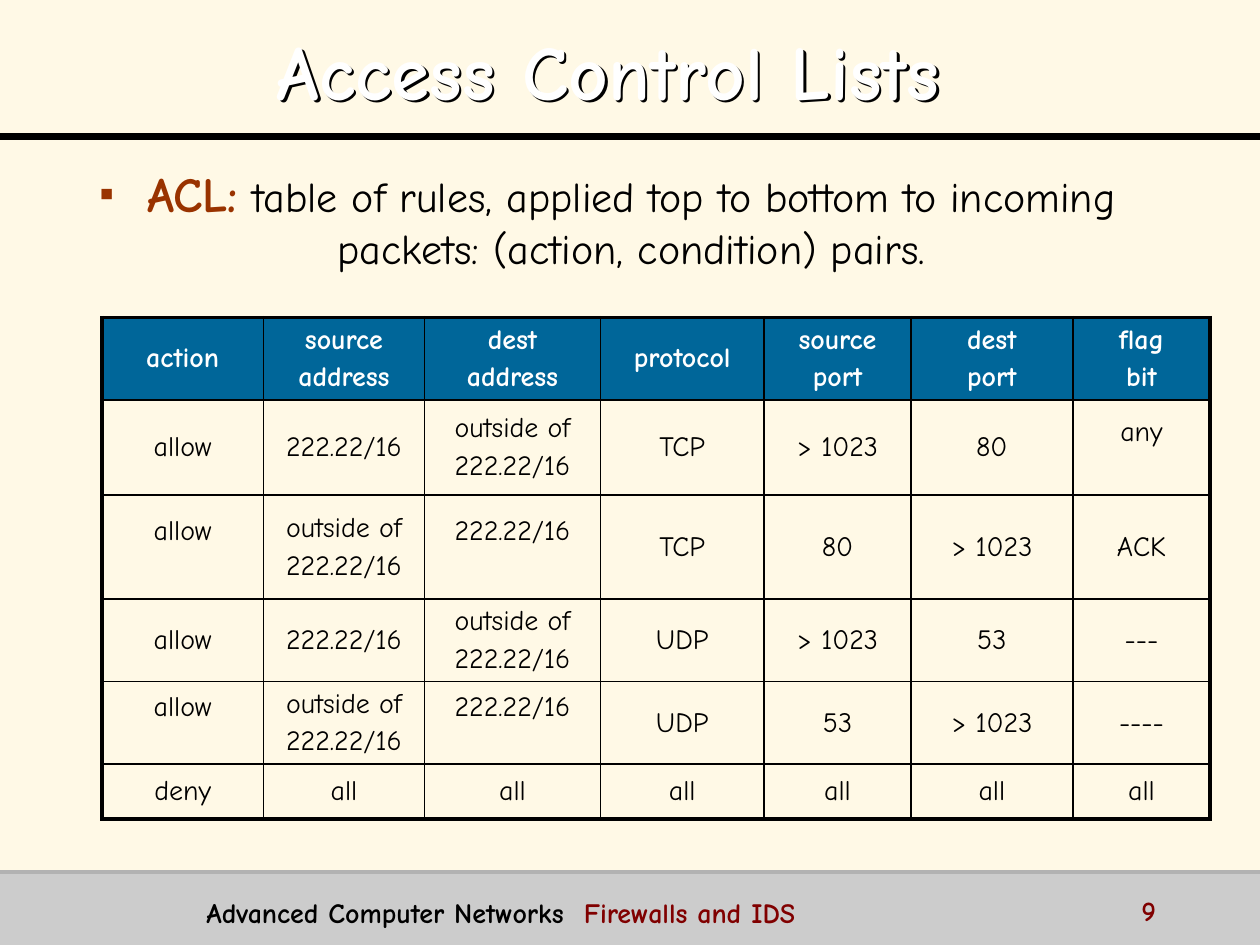
import dataclasses
import pptx
import pptx.dml.color
import pptx.enum.shapes
import pptx.enum.text
import pptx.oxml
import pptx.oxml.ns
import pptx.util


@dataclasses.dataclass(frozen=True)
class Theme:
    font: str = "Comic Neue"
    paper: str = "FFF9E6"
    ink: str = "000000"
    white: str = "FFFFFF"
    header: str = "006699"
    accent: str = "993300"
    footer: str = "CCCCCC"
    footer_edge: str = "B2B2B2"
    maroon: str = "800000"
    title_size: int = 44
    term_size: int = 28
    body_size: int = 24
    small_size: int = 16
    thick: float = 2.25
    thin: float = 1


THEME = Theme()
PP_ALIGN = pptx.enum.text.PP_ALIGN
ANCHOR = pptx.enum.text.MSO_ANCHOR
Pt = pptx.util.Pt

TITLE = "Access Control Lists"
DEFINITION = [
    ("ACL:", {"size": THEME.term_size, "color": THEME.accent, "bold": True}),
    (" ", {"color": THEME.accent, "bold": True}),
    ("table of rules, applied top to bottom to incoming packets: (action, condition) pairs.", {}),
]
FOOTER = [("Advanced Computer Networks  ", {}), ("Firewalls and IDS", {"color": THEME.maroon})]
PAGE = "9"

INSIDE, OUTSIDE = "222.22/16", "outside of\n222.22/16"
RULES = [
    ["action", "source\naddress", "dest\naddress", "protocol", "source\nport", "dest\nport", "flag\nbit"],
    ["allow", INSIDE, OUTSIDE, "TCP", "> 1023", "80", "any"],
    ["allow", OUTSIDE, INSIDE, "TCP", "80", "> 1023", "ACK"],
    ["allow", INSIDE, OUTSIDE, "UDP", "> 1023", "53", "---"],
    ["allow", OUTSIDE, INSIDE, "UDP", "53", "> 1023", "----"],
    ["deny"] + ["all"] * 6,
]
RAISED = {(1, 6), (2, 0), (2, 2), (4, 0), (4, 2)}

GRID_COLUMNS = 100
COLUMN_SPANS = [12.8, 12.8, 13.95, 13, 11.65, 12.85, 10.9]
ROW_SPANS = [6.5, 7.55, 8.25, 6.55, 6.55, 4.35]
TABLE_LEFT, TABLE_TOP = 8.1, 25.2
TITLE_RULE, FOOTER_TOP, GRID_ROWS = 10.8, 69.2, 75

deck = pptx.Presentation()
deck.slide_width, deck.slide_height = pptx.util.Inches(10), pptx.util.Inches(7.5)


def span(units):
    return round(deck.slide_width * units / GRID_COLUMNS)


def place(shape, *box):
    shape.left, shape.top, shape.width, shape.height = map(span, box)


def rgb(code):
    return pptx.dml.color.RGBColor.from_string(code)


def element(xml):
    return pptx.oxml.parse_xml(xml.replace(" ", f" {pptx.oxml.ns.nsdecls('a')} ", 1))


def write(frame, text, size=THEME.small_size, color=THEME.ink, bold=False,
          align=PP_ALIGN.LEFT, anchor=ANCHOR.TOP, line_spacing=None, bullet=None):
    frame.word_wrap = True
    frame.vertical_anchor = anchor
    lines = [[(line, {})] for line in text.split("\n")] if isinstance(text, str) else [text]
    for number, runs in enumerate(lines):
        paragraph = frame.add_paragraph() if number else frame.paragraphs[0]
        if bullet:
            properties = paragraph._p.get_or_add_pPr()
            indent = span(3.8)
            properties.set("marL", str(indent))
            properties.set("indent", str(-indent))
            properties.append(element(f'<a:buClr ><a:srgbClr val="{THEME.accent}"/></a:buClr>'))
            properties.append(element('<a:buSzPct val="85000"/>'))
            properties.append(element(f'<a:buChar char="{bullet}"/>'))
        paragraph.alignment = align
        paragraph.space_before = Pt(size * 0.2 if number else 0)
        if line_spacing:
            paragraph.line_spacing = line_spacing
        for words, change in runs:
            style = {"size": size, "color": color, "bold": bold, **change}
            run = paragraph.add_run()
            run.text = words
            run.font.name = THEME.font
            run.font.size = Pt(style["size"])
            run.font.bold = style["bold"]
            run.font.color.rgb = rgb(style["color"])


def draw_rule(slide, row, color, width):
    rule = slide.shapes.add_connector(
        pptx.enum.shapes.MSO_CONNECTOR.STRAIGHT, 0, span(row), span(GRID_COLUMNS), span(row))
    rule.line.color.rgb = rgb(color)
    rule.line.width = Pt(width)
    rule._element.spPr.append(element("<a:effectLst />"))


def border(cell, outer_sides):
    for order, side in enumerate("LRTB"):
        width = Pt(THEME.thick if side in outer_sides else THEME.thin)
        cell._tc.get_or_add_tcPr().insert(order, element(
            f'<a:ln{side} w="{width}"><a:solidFill><a:srgbClr val="{THEME.ink}"/>'
            f'</a:solidFill></a:ln{side}>'))


def draw_rules_table(slide):
    rules = slide.shapes.add_table(
        len(RULES), len(COLUMN_SPANS), span(TABLE_LEFT), span(TABLE_TOP),
        span(sum(COLUMN_SPANS)), span(sum(ROW_SPANS))).table
    rules.first_row = rules.horz_banding = False
    for column, units in zip(rules.columns, COLUMN_SPANS):
        column.width = span(units)
    for row, units in zip(rules.rows, ROW_SPANS):
        row.height = span(units)
    last_row, last_column = len(RULES) - 1, len(COLUMN_SPANS) - 1
    for r, entries in enumerate(RULES):
        for c, entry in enumerate(entries):
            cell = rules.cell(r, c)
            heading = r == 0
            write(cell.text_frame, entry, color=THEME.white if heading else THEME.ink,
                  bold=heading, align=PP_ALIGN.CENTER)
            cell.vertical_anchor = ANCHOR.MIDDLE
            if (r, c) in RAISED:
                cell.margin_bottom = span(3)
            if heading:
                cell.fill.solid()
                cell.fill.fore_color.rgb = rgb(THEME.header)
            else:
                cell.fill.background()
            edges = {"L": c == 0, "R": c == last_column, "T": r == 0, "B": r == last_row}
            border(cell, [side for side, outer in edges.items() if outer])


def main():
    slide = deck.slides.add_slide(deck.slide_layouts[1])
    slide.background.fill.solid()
    slide.background.fill.fore_color.rgb = rgb(THEME.paper)

    footer_band = slide.shapes.add_shape(
        pptx.enum.shapes.MSO_SHAPE.RECTANGLE, 0, span(FOOTER_TOP),
        span(GRID_COLUMNS), span(GRID_ROWS - FOOTER_TOP))
    footer_band.shadow.inherit = False
    footer_band.fill.solid()
    footer_band.fill.fore_color.rgb = rgb(THEME.footer)
    footer_band.line.fill.background()
    draw_rule(slide, TITLE_RULE, THEME.ink, 4)
    draw_rule(slide, FOOTER_TOP, THEME.footer_edge, 2)
    draw_rules_table(slide)

    title = slide.shapes.title
    place(title, 5.8, 0, 85, 10.3)
    write(title.text_frame, TITLE, size=THEME.title_size, color=THEME.white, bold=True,
          align=PP_ALIGN.CENTER, anchor=ANCHOR.MIDDLE, line_spacing=1.1)
    title.fill.background()
    title._element.spPr.append(element(
        f'<a:effectLst ><a:outerShdw dist="{Pt(2)}" dir="2700000" algn="ctr" rotWithShape="0">'
        f'<a:srgbClr val="{THEME.ink}"/></a:outerShdw></a:effectLst>'))

    definition = slide.placeholders[1]
    place(definition, 5.7, 12.5, 85, 11.1)
    write(definition.text_frame, DEFINITION, size=THEME.body_size,
          align=PP_ALIGN.CENTER, bullet="▪")
    for placeholder in (title, definition):
        placeholder.text_frame.auto_size = pptx.enum.text.MSO_AUTO_SIZE.NONE

    course = slide.shapes.add_textbox(span(15.4), span(70.6), span(72.8), span(3.1))
    write(course.text_frame, FOOTER, bold=True)
    page = slide.shapes.add_textbox(span(89.6), span(70.4), span(10), span(2.5))
    write(page.text_frame, PAGE, color=THEME.maroon, bold=True)

    deck.save("out.pptx")


if __name__ == "__main__":
    main()
